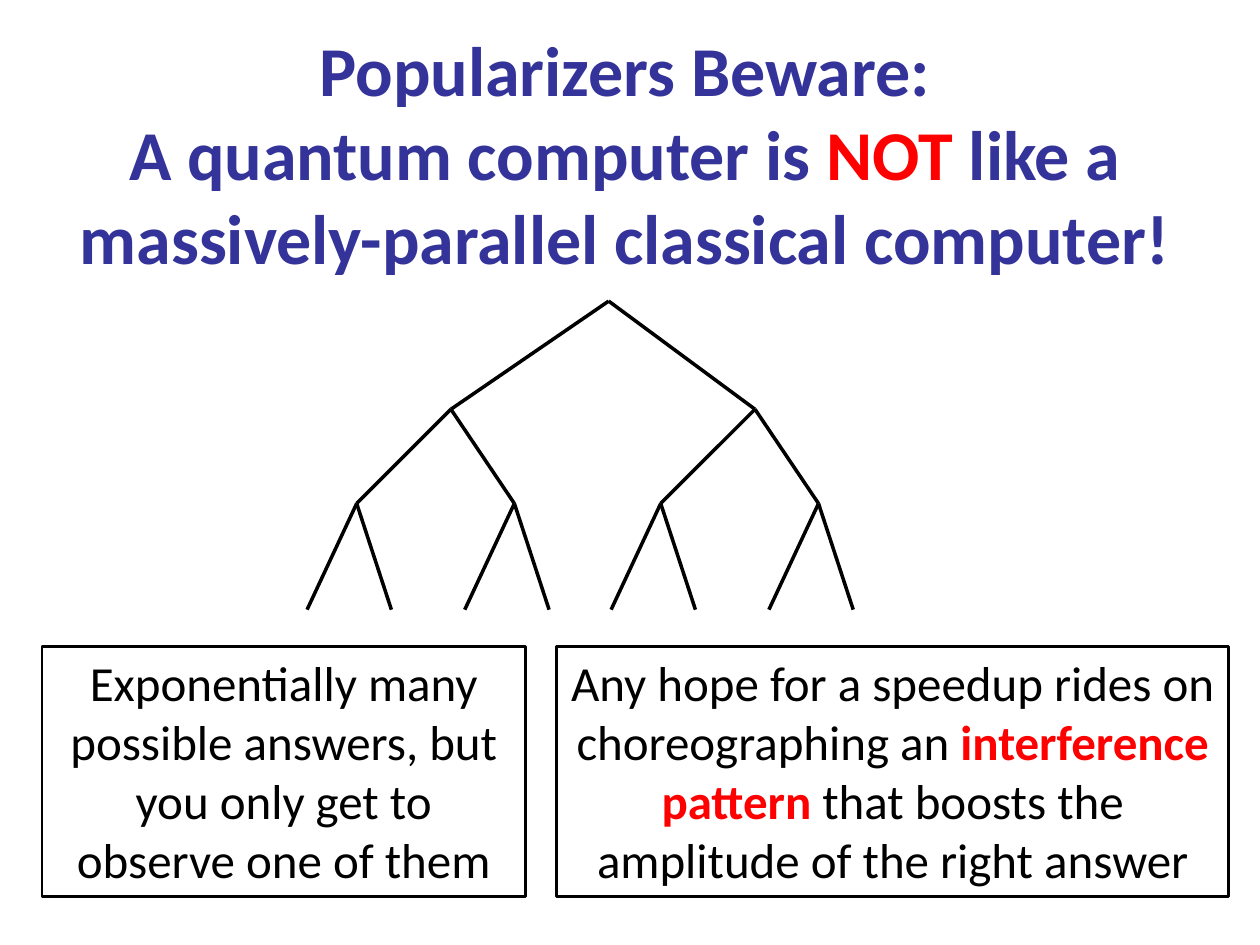
from pptx import Presentation
from pptx.dml.color import RGBColor
from pptx.enum.shapes import MSO_CONNECTOR, MSO_SHAPE
from pptx.enum.text import MSO_ANCHOR, MSO_AUTO_SIZE, PP_ALIGN
from pptx.oxml.ns import qn
from pptx.util import Cm, Pt
from lxml import etree

BLACK = RGBColor(0, 0, 0)
BLUE = RGBColor(0x33, 0x33, 0x99)
RED = RGBColor(0xFF, 0, 0)
LINE = MSO_CONNECTOR.STRAIGHT
RECT = MSO_SHAPE.RECTANGLE
CENTER = PP_ALIGN.CENTER
MIDDLE, TOP = MSO_ANCHOR.MIDDLE, MSO_ANCHOR.TOP
NO_FIT = MSO_AUTO_SIZE.NONE


def write(para, parts, size, color, bold=None):
    """Add runs to a centred paragraph; starred parts are bold red."""
    para.alignment = CENTER
    para.font.name = "Calibri"
    para.font.size = Pt(size)
    para.font.bold = bold
    para.font.color.rgb = color
    for part in parts:
        if part == "\n":
            para.add_line_break()
            continue
        run = para.add_run()
        run.text = part.strip("*")
        font = run.font
        font.name, font.size = "Calibri", Pt(size)
        font.bold = True if part.startswith("*") else bold
        font.color.rgb = RED if part.startswith("*") else color


def add_title(slide, left, top, width, height):
    box = slide.shapes.add_textbox(Cm(left), Cm(top), Cm(width), Cm(height))
    frame = box.text_frame
    frame.word_wrap = True
    frame.auto_size = NO_FIT
    frame.vertical_anchor = MIDDLE
    parts = ["Popularizers Beware:", "\n", "A quantum computer is ", "*NOT*",
             " like a massively-parallel classical computer!"]
    write(frame.paragraphs[0], parts, 40, BLUE, True)


def add_tree(slide, x, y, levels):
    """Draw both branches below a node, then the trees at their ends."""
    if not levels:
        return
    (left, right, drop), *rest = levels
    for shift in (left, right):
        end_x, end_y = x + shift, y + drop
        edge = slide.shapes.add_connector(
            LINE, Cm(x), Cm(y), Cm(end_x), Cm(end_y))
        edge.line.color.rgb = BLACK
        edge.line.width = Pt(2)
        etree.SubElement(edge.element.spPr, qn("a:effectLst"))
        add_tree(slide, end_x, end_y, rest)


def add_note(slide, left, top, width, height, parts):
    box = slide.shapes.add_shape(
        RECT, Cm(left), Cm(top), Cm(width), Cm(height))
    box.shadow.inherit = False
    box.fill.background()
    box.line.color.rgb = BLACK
    box.line.width = Pt(1.5)
    frame = box.text_frame
    frame.word_wrap = True
    frame.vertical_anchor = TOP
    write(frame.paragraphs[0], parts, 28, BLACK)


def main():
    deck = Presentation()
    deck.slide_width, deck.slide_height = Cm(25.4), Cm(19.05)
    slide = deck.slides.add_slide(deck.slide_layouts[6])

    add_title(slide, 1.06, 1.48, 23.07, 3.18)

    # Branching paths: left shift, right shift and drop of each level
    levels = [(-3.18, 2.95, 2.18), (-1.9, 1.28, 1.9), (-1, 0.7, 2.14)]
    add_tree(slide, 12.27, 6.07, levels)

    # Notes below the tree
    top, height = 13.03, 5.04
    add_note(slide, 0.85, top, 9.74, height, [
        "Exponentially many possible answers, but you only get to "
        "observe one of them"])
    add_note(slide, 11.22, top, 13.55, height, [
        "Any hope for a speedup rides on choreographing an ",
        "*interference pattern *",
        "that boosts the amplitude of the right answer"])

    deck.save("out.pptx")


if __name__ == "__main__":
    main()
